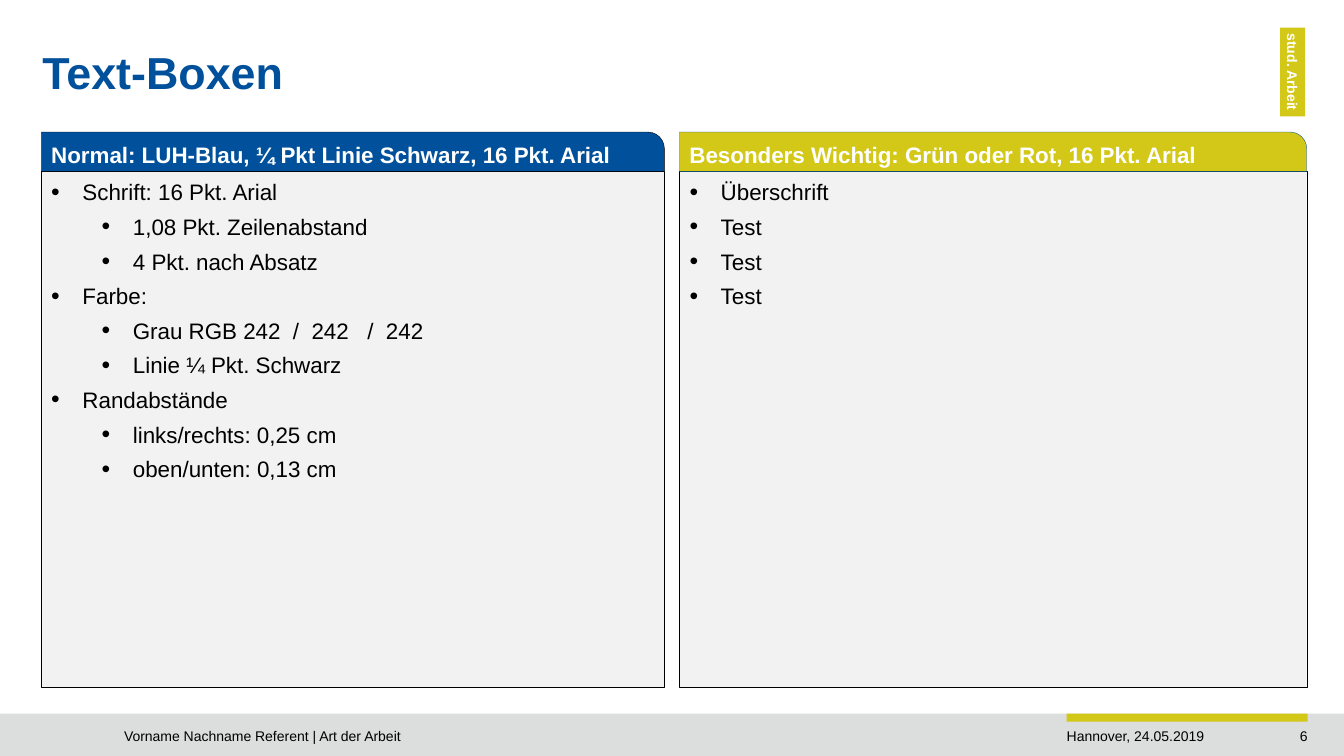
from dataclasses import dataclass

import lxml.etree
import pptx
import pptx.dml.color
import pptx.enum.shapes
import pptx.enum.text
import pptx.oxml.ns
import pptx.util

Inches = pptx.util.Inches
Pt = pptx.util.Pt
RGBColor = pptx.dml.color.RGBColor
Shapes = pptx.enum.shapes.MSO_SHAPE
Align = pptx.enum.text.PP_ALIGN
Anchor = pptx.enum.text.MSO_ANCHOR

BLUE = RGBColor(0x00, 0x50, 0x9B)
GREEN = RGBColor(0xD3, 0xC8, 0x17)
FOOTER_GREY = RGBColor(0xDC, 0xDE, 0xDE)
BOX_GREY = RGBColor(0xF2, 0xF2, 0xF2)
BLACK = RGBColor(0, 0, 0)
WHITE = RGBColor(0xFF, 0xFF, 0xFF)

FONT = "Arial"
HEADER_TOP, HEADER_HEIGHT, BODY_HEIGHT = 1.31, 0.39, 5.12
BULLET_INDENT, LEVEL_STEP = 0.31, 0.5


@dataclass
class Area:
    left: float
    top: float
    width: float
    height: float

    def lengths(self) -> list[pptx.util.Length]:
        return [Inches(n) for n in (self.left, self.top, self.width, self.height)]


@dataclass
class Label:
    text: str
    area: Area
    margins: tuple[float, float, float, float]  # left, top, right, bottom
    size: int = 10
    color: RGBColor = BLACK
    bold: bool = False
    align: Align = Align.LEFT
    anchor: Anchor = Anchor.TOP


@dataclass
class Panel:
    left: float
    width: float
    heading: str
    heading_fill: RGBColor
    heading_line: RGBColor
    items: list[tuple[int, str]]  # level, text


LABELS = [
    Label("Text-Boxen", Area(0.42, 0.28, 11.6, 0.87), (0, 0, 0, 0),
          32, BLUE, True, anchor=Anchor.MIDDLE),
    Label("Vorname Nachname Referent | Art der Arbeit",
          Area(1.23, 7.17, 9.05, 0.27), (0, 0.05, 0.1, 0.05)),
    Label("Hannover, 24.05.2019", Area(10.58, 7.17, 1.91, 0.27), (0, 0.05, 0, 0.05)),
    Label("6", Area(12.11, 7.17, 0.86, 0.33), (0.1, 0.05, 0, 0.05), align=Align.RIGHT),
]

TAG = Label("stud. Arbeit", Area(12.38, 0.59, 0.88, 0.25), (0, 0.04, 0, 0.04),
            color=WHITE, bold=True, align=Align.CENTER)

PANELS = [
    Panel(0.41, 6.18, "Normal: LUH-Blau, ¼ Pkt Linie Schwarz, 16 Pkt. Arial", BLUE, BLACK, [
        (0, "Schrift: 16 Pkt. Arial"),
        (1, "1,08 Pkt. Zeilenabstand"),
        (1, "4 Pkt. nach Absatz"),
        (0, "Farbe:"),
        (1, "Grau RGB 242  /  242   /  242"),
        (1, "Linie ¼ Pkt. Schwarz"),
        (0, "Randabstände"),
        (1, "links/rechts: 0,25 cm"),
        (1, "oben/unten: 0,13 cm"),
    ]),
    Panel(6.74, 6.22, "Besonders Wichtig: Grün oder Rot, 16 Pkt. Arial", GREEN, BLUE, [
        (0, "Überschrift"),
        (0, "Test"),
        (0, "Test"),
        (0, "Test"),
    ]),
]


def add_box(slide, area: Area, fill: RGBColor, line: RGBColor | None = None,
            kind: Shapes = Shapes.RECTANGLE):
    shape = slide.shapes.add_shape(kind, *area.lengths())
    shape.shadow.inherit = False
    shape.fill.solid()
    shape.fill.fore_color.rgb = fill
    if line is None:
        shape.line.fill.background()
    else:
        shape.line.color.rgb = line
        shape.line.width = Pt(0.25)
    return shape


def set_frame(text_frame, margins: tuple[float, float, float, float], anchor: Anchor) -> None:
    text_frame.word_wrap = True
    text_frame.vertical_anchor = anchor
    (text_frame.margin_left, text_frame.margin_top,
     text_frame.margin_right, text_frame.margin_bottom) = map(Inches, margins)


def format_runs(paragraph, size: int, color: RGBColor, bold: bool = False) -> None:
    for run in paragraph.runs:
        run.font.name = FONT
        run.font.size = Pt(size)
        run.font.bold = bold
        run.font.color.rgb = color


def write_label(shape, label: Label) -> None:
    set_frame(shape.text_frame, label.margins, label.anchor)
    shape.text_frame.text = label.text
    paragraph = shape.text_frame.paragraphs[0]
    paragraph.alignment = label.align
    format_runs(paragraph, label.size, label.color, label.bold)


def add_bullet(paragraph, level: int) -> None:
    properties = paragraph._p.get_or_add_pPr()
    properties.set("marL", str(Inches(BULLET_INDENT + level * LEVEL_STEP)))
    properties.set("indent", str(-Inches(BULLET_INDENT)))
    for tag, name, value in (("a:buSzPct", "val", "110000"),
                             ("a:buFont", "typeface", FONT),
                             ("a:buChar", "char", "•")):
        lxml.etree.SubElement(properties, pptx.oxml.ns.qn(tag)).set(name, value)


def add_panel(slide, panel: Panel) -> None:
    # Body with bullet list
    body = add_box(slide, Area(panel.left, HEADER_TOP + HEADER_HEIGHT, panel.width, BODY_HEIGHT),
                   BOX_GREY, BLACK)
    set_frame(body.text_frame, (0.1, 0.05, 0.1, 0.05), Anchor.TOP)
    body.text_frame.text = "\n".join(text for _, text in panel.items)
    for paragraph, (level, _) in zip(body.text_frame.paragraphs, panel.items):
        add_bullet(paragraph, level)
        paragraph.level = level
        paragraph.alignment = Align.LEFT
        paragraph.line_spacing = 1.08
        paragraph.space_after = Pt(4)
        format_runs(paragraph, 16, BLACK)

    # Heading, mirrored so that the top right corner is round
    area = Area(panel.left, HEADER_TOP, panel.width, HEADER_HEIGHT)
    heading = add_box(slide, area, panel.heading_fill, panel.heading_line,
                      Shapes.SNIP_ROUND_RECTANGLE)
    heading.adjustments[0] = 0.42
    heading.adjustments[1] = 0
    heading._element.spPr.xfrm.set("flipH", "1")
    write_label(heading, Label(panel.heading, area, (0.1, 0, 0.1, 0), 16, WHITE, True,
                               anchor=Anchor.MIDDLE))


def main() -> None:
    presentation = pptx.Presentation()
    presentation.slide_width = Inches(13.33)
    presentation.slide_height = Inches(7.5)
    slide = presentation.slides.add_slide(presentation.slide_layouts[6])

    # Footer bar and accent
    add_box(slide, Area(0, 7.08, 13.33, 0.42), FOOTER_GREY)
    add_box(slide, Area(10.58, 7.08, 2.39, 0.08), GREEN)

    # Rotated tag
    tag = add_box(slide, TAG.area, GREEN)
    tag.rotation = 90
    write_label(tag, TAG)

    # Title and footer texts
    for label in LABELS:
        write_label(slide.shapes.add_textbox(*label.area.lengths()), label)

    # Text panels
    for panel in PANELS:
        add_panel(slide, panel)

    presentation.save("out.pptx")


if __name__ == "__main__":
    main()
